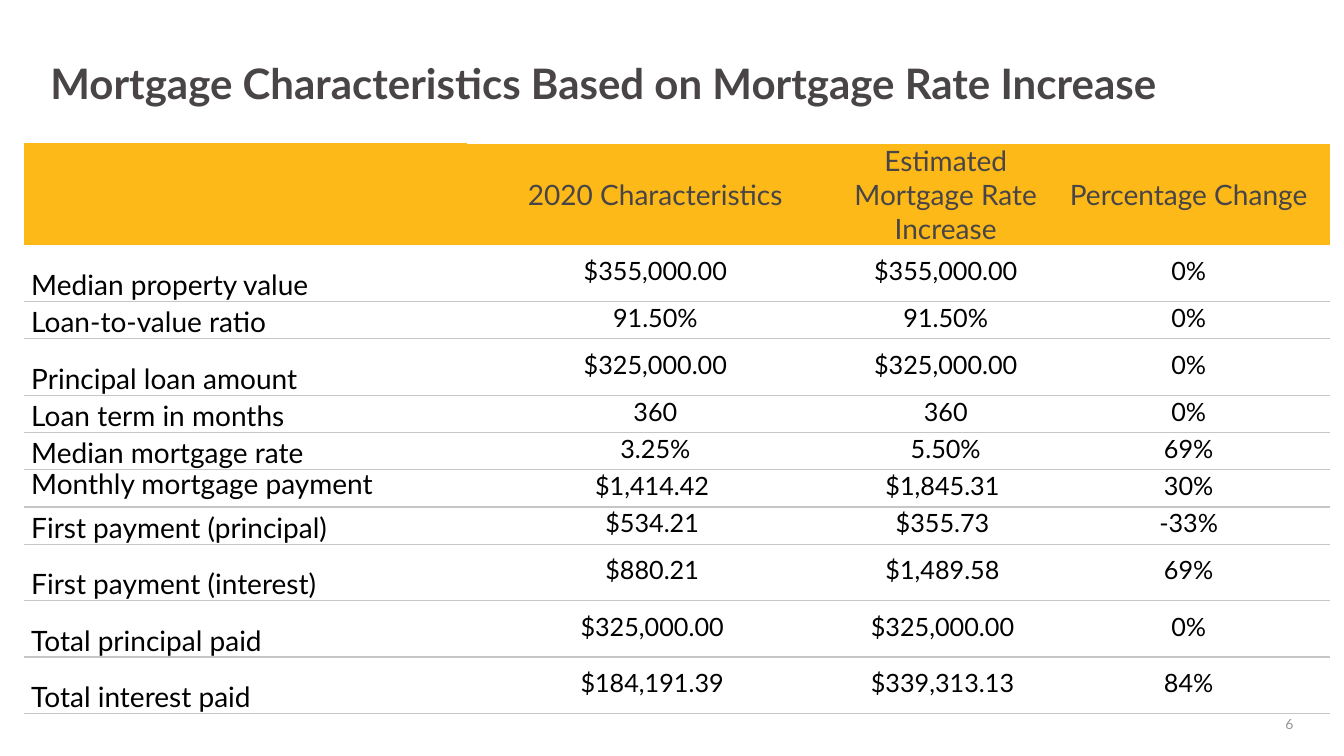
import pptx
import pptx.util
import pptx.dml.color
import pptx.enum.text
import pptx.oxml
import pptx.oxml.ns

Inches = pptx.util.Inches
Pt = pptx.util.Pt
ALIGN = pptx.enum.text.PP_ALIGN
ANCHOR = pptx.enum.text.MSO_ANCHOR

FONT = "Lato"
GOLD, INK, BLACK, RULE, WHITE, GREY = "FCB918", "494546", "000000", "C6C6C6", "FFFFFF", "959494"
NO_STYLE = "{2D5ABB26-0587-4C30-8999-92F81FD0307C}"

HEADERS = ["", "2020 Characteristics", "Estimated Mortgage Rate Increase", "Percentage Change"]
COL_WIDTHS = [4.39, 3.74, 2.02, 2.8]
HEADER_HEIGHT, TALL, SHORT = 1.01, 0.56, 0.37
# Row height, label, 2020 value, value after the increase, change
ROWS = [
    (TALL, "Median property value", "$355,000.00", "$355,000.00", "0%"),
    (SHORT, "Loan-to-value ratio", "91.50%", "91.50%", "0%"),
    (TALL, "Principal loan amount", "$325,000.00", "$325,000.00", "0%"),
    (SHORT, "Loan term in months", "360", "360", "0%"),
    (SHORT, "Median mortgage rate", "3.25%", "5.50%", "69%"),
    (SHORT, "Monthly mortgage payment", "$1,414.42 ", "$1,845.31 ", "30%"),
    (SHORT, "First payment (principal)", "$534.21 ", "$355.73 ", "-33%"),
    (TALL, "First payment (interest)", "$880.21 ", "$1,489.58 ", "69%"),
    (TALL, "Total principal paid", "$325,000.00 ", "$325,000.00 ", "0%"),
    (TALL, "Total interest paid", "$184,191.39 ", "$339,313.13 ", "84%"),
]
MIDDLE_LABEL = "Monthly mortgage payment"


def rgb(color):
    return pptx.dml.color.RGBColor.from_string(color)


def put_text(tf, text, size=18, color=BLACK, bold=False, align=ALIGN.LEFT, spacing=None):
    p = tf.paragraphs[0]
    p.alignment = align
    if spacing is not None:
        p.line_spacing = spacing
    r = p.add_run()
    r.text = text
    r.font.name = FONT
    r.font.size = Pt(size)
    r.font.bold = bold
    r.font.color.rgb = rgb(color)


def set_margins(target, left, top, right, bottom):
    target.margin_left, target.margin_top = Inches(left), Inches(top)
    target.margin_right, target.margin_bottom = Inches(right), Inches(bottom)


def set_border(cell, side, color):
    line = pptx.oxml.parse_xml(
        f'<a:ln{side} {pptx.oxml.ns.nsdecls("a")} w="12700"><a:solidFill>'
        f'<a:srgbClr val="{color}"/></a:solidFill></a:ln{side}>')
    cell._tc.get_or_add_tcPr().insert(0, line)


def add_title(s, text, x, y, w, h):
    sp = s.shapes.title
    sp.left, sp.top, sp.width, sp.height = Inches(x), Inches(y), Inches(w), Inches(h)
    tf = sp.text_frame
    tf.auto_size = pptx.enum.text.MSO_AUTO_SIZE.NONE
    tf.word_wrap = True
    tf.vertical_anchor = ANCHOR.TOP
    set_margins(tf, 0, 0.05, 0, 0.05)
    put_text(tf, text, size=30, color=INK, bold=True, spacing=0.9)


def fill_header(cell, text):
    cell.fill.solid()
    cell.fill.fore_color.rgb = rgb(GOLD)
    cell.vertical_anchor = ANCHOR.MIDDLE
    set_margins(cell, 0.01, 0.01, 0.01, 0)
    if text:
        set_border(cell, "T", WHITE)
        put_text(cell.text_frame, text, size=20, color=INK, align=ALIGN.CENTER)


def fill_body(cell, text, is_label):
    cell.fill.background()
    at_bottom = is_label and text != MIDDLE_LABEL
    cell.vertical_anchor = ANCHOR.BOTTOM if at_bottom else ANCHOR.MIDDLE
    set_margins(cell, 0.07, 0, 0.07, 0)
    set_border(cell, "B", RULE)
    put_text(cell.text_frame, text, size=20 if is_label else 18, spacing=Pt(18),
             align=ALIGN.LEFT if is_label else ALIGN.CENTER)


def add_mortgage_table(s, x, y):
    heights = [HEADER_HEIGHT] + [row[0] for row in ROWS]
    frame = s.shapes.add_table(len(heights), len(COL_WIDTHS), Inches(x), Inches(y),
                               Inches(sum(COL_WIDTHS)), Inches(sum(heights)))
    table = frame.table
    table.first_row = True
    table.horz_banding = False
    table._tbl.tblPr.find(pptx.oxml.ns.qn("a:tableStyleId")).text = NO_STYLE
    for column, width in zip(table.columns, COL_WIDTHS):
        column.width = Inches(width)
    for row, height in zip(table.rows, heights):
        row.height = Inches(height)
    for c, text in enumerate(HEADERS):
        fill_header(table.cell(0, c), text)
    for r, (_, *texts) in enumerate(ROWS, start=1):
        for c, text in enumerate(texts):
            fill_body(table.cell(r, c), text, is_label=c == 0)


def add_page_number(s, text, x, y, w, h):
    sp = s.shapes.add_textbox(Inches(x), Inches(y), Inches(w), Inches(h))
    tf = sp.text_frame
    tf.word_wrap = True
    tf.vertical_anchor = ANCHOR.MIDDLE
    set_margins(tf, 0, 0, 0, 0)
    put_text(tf, text, size=10, color=GREY, align=ALIGN.RIGHT)


def main():
    prs = pptx.Presentation()
    prs.slide_width, prs.slide_height = Inches(13.33), Inches(7.5)
    s = prs.slides.add_slide(prs.slide_layouts[5])
    # Page number, title and table
    add_page_number(s, "6", 9.83, 7.07, 3, 0.23)
    add_title(s, "Mortgage Characteristics Based on Mortgage Rate Increase", 0.5, 0.58, 12.33, 1.27)
    add_mortgage_table(s, 0.24, 1.42)
    prs.save("out.pptx")


if __name__ == "__main__":
    main()
